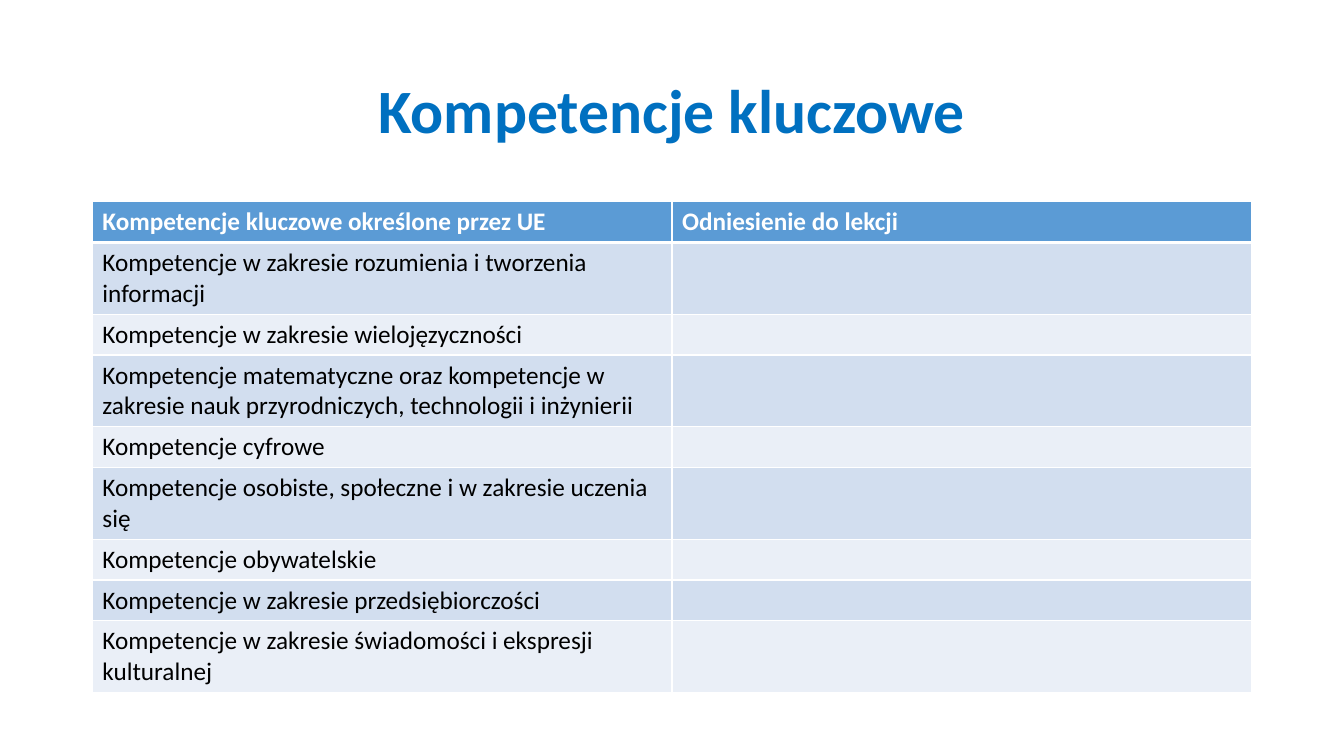
"""Build the slide on key competences with its two-column table."""
from lxml import etree
from pptx import Presentation
from pptx.dml.color import RGBColor
from pptx.enum import text
from pptx.oxml import ns
from pptx.util import Pt

HUES = {"title": "0070C0", "head": "5B9BD5", "odd": "D2DEEF",
        "even": "EAEFF7", "white": "FFFFFF", "black": "000000"}
LEFT, WIDE = 66, 828
LOW, HIGH = 29.2, 51
HEADS = ["Kompetencje kluczowe określone przez UE", "Odniesienie do lekcji"]
SKILLS = [
    ("Kompetencje w zakresie rozumienia i tworzenia informacji", HIGH),
    ("Kompetencje w zakresie wielojęzyczności", LOW),
    ("Kompetencje matematyczne oraz kompetencje w zakresie nauk "
     "przyrodniczych, technologii i inżynierii", HIGH),
    ("Kompetencje cyfrowe", LOW),
    ("Kompetencje osobiste, społeczne i w zakresie uczenia się", HIGH),
    ("Kompetencje obywatelskie", LOW),
    ("Kompetencje w zakresie przedsiębiorczości", LOW),
    ("Kompetencje w zakresie świadomości i ekspresji kulturalnej", HIGH),
]


def style(par, size, hue, bold):
    par.font.name = "Calibri"
    par.font.size = Pt(size)
    par.font.bold = bold
    par.font.color.rgb = RGBColor.from_string(HUES[hue])


def edge(cell, side, width):
    line = etree.Element(ns.qn("a:ln" + side), w=str(Pt(width)))
    fill = etree.SubElement(line, ns.qn("a:solidFill"))
    etree.SubElement(fill, ns.qn("a:srgbClr"), val=HUES["white"])
    cell._tc.get_or_add_tcPr().insert("LRTB".index(side), line)


deck = Presentation()
deck.slide_width, deck.slide_height = Pt(960), Pt(540)
slide = deck.slides.add_slide(deck.slide_layouts[5])

title = slide.shapes.title
title.left, title.top = Pt(LEFT), Pt(28.8)
title.width, title.height = Pt(WIDE), Pt(104.4)
title.text_frame.text = "Kompetencje kluczowe"
title.text_frame.vertical_anchor = text.MSO_ANCHOR.MIDDLE
par = title.text_frame.paragraphs[0]
par.alignment = text.PP_ALIGN.CENTER
par.line_spacing = 0.9
style(par, 44, "title", True)

rows = [(HEADS, LOW)] + [([name, ""], high) for name, high in SKILLS]
total = sum(high for _, high in rows)
table = slide.shapes.add_table(len(rows), len(HEADS), Pt(LEFT), Pt(144),
                               Pt(WIDE), Pt(total)).table
for r, (words, high) in enumerate(rows):
    table.rows[r].height = Pt(high)
    band = "head" if r == 0 else "odd" if r % 2 else "even"
    for c, word in enumerate(words):
        cell = table.cell(r, c)
        cell.fill.solid()
        cell.fill.fore_color.rgb = RGBColor.from_string(HUES[band])
        for side in "LRTB":
            thick = (r, side) in ((0, "B"), (1, "T"))
            edge(cell, side, 3 if thick else 1)
        cell.text = word
        style(cell.text_frame.paragraphs[0], 18,
              "black" if r else "white", r == 0)

deck.save("out.pptx")
